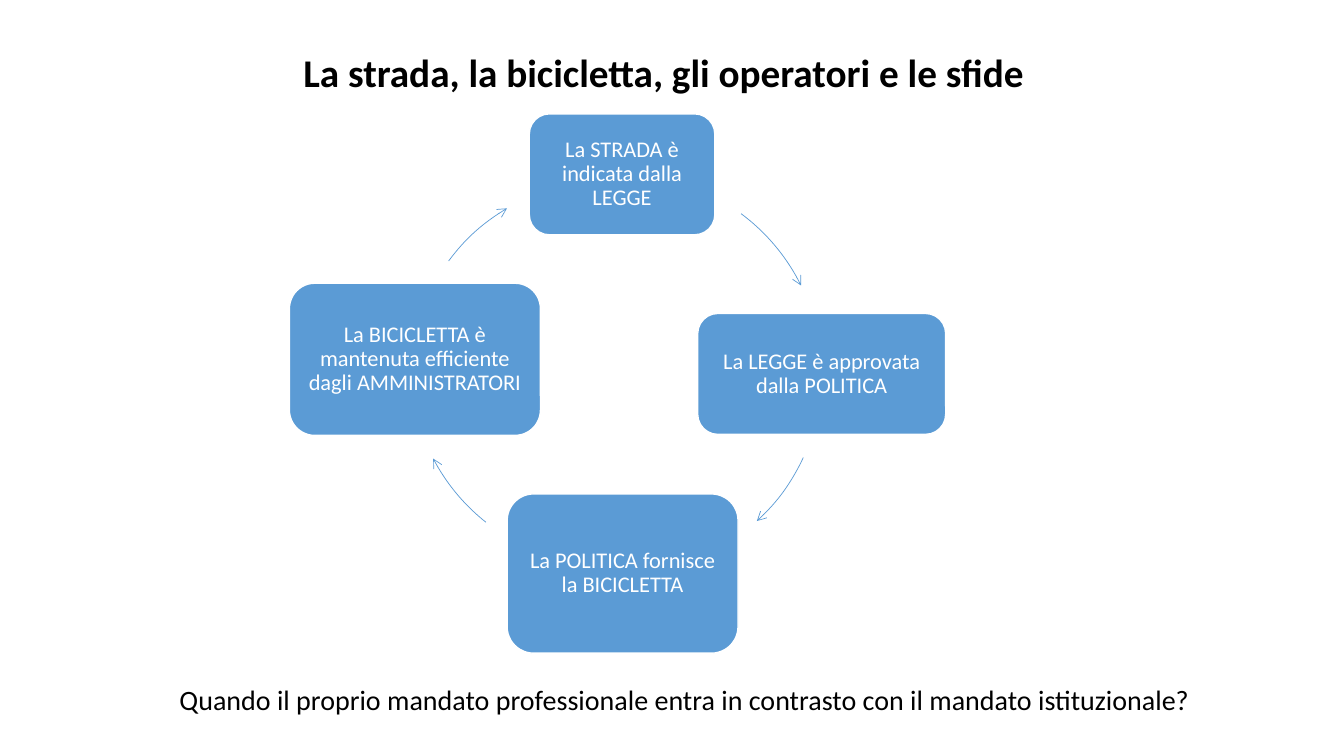
from pptx import Presentation
from pptx.dml.color import RGBColor
from pptx.enum.shapes import MSO_SHAPE as Shape
from pptx.enum.text import MSO_ANCHOR as Anchor, PP_ALIGN as Align
from pptx.oxml.ns import qn
from pptx.util import Inches, Pt
from lxml.etree import SubElement

TITLE = "La strada, la bicicletta, gli operatori e le sfide"
QUESTION = ("Quando il proprio mandato professionale entra in contrasto "
            "con il mandato istituzionale?")
# Text, then left, top, width, height in inches
STEPS = [
    ("La STRADA è indicata dalla LEGGE", (5.25, 1.13, 1.84, 1.2)),
    ("La LEGGE è approvata dalla POLITICA", (6.92, 3.11, 2.46, 1.2)),
    ("La POLITICA fornisce la BICICLETTA", (5.03, 4.9, 2.29, 1.58)),
    ("La BICICLETTA è mantenuta efficiente dagli AMMINISTRATORI",
     (2.87, 2.81, 2.49, 1.51)),
]
# Centre of the circle in inches, then start and end in clockwise degrees
ARROWS = [
    ((6.17, 3.71), (306.6, 333.7)),
    ((6.17, 3.71), (24.8, 47.5)),
    ((6.05, 3.63), (128.4, 152.3)),
    ((6.04, 3.77), (216.6, 239.3)),
]
RADIUS = 1.98

THEME = {
    "font": "Calibri",
    "black": RGBColor(0x00, 0x00, 0x00),
    "white": RGBColor(0xFF, 0xFF, 0xFF),
    "blue": RGBColor(0x5B, 0x9B, 0xD5),
    "title": Pt(28),
    "question": Pt(20),
    "step": Pt(16),
}


def write(frame, text, size, color, align, anchor, bold=False, margins=None):
    frame.text = text
    paragraph = frame.paragraphs[0]
    formats = [
        (frame, {"word_wrap": True, "vertical_anchor": anchor, **(margins or {})}),
        (paragraph, {"alignment": align, "line_spacing": 0.9, "space_before": Pt(0)}),
        (paragraph.font, {"name": THEME["font"], "size": size, "bold": bold}),
    ]
    for target, values in formats:
        for name, value in values.items():
            setattr(target, name, value)
    paragraph.font.color.rgb = color


def add_step(slide, text, box):
    step = slide.shapes.add_shape(Shape.ROUNDED_RECTANGLE, *map(Inches, box))
    step.shadow.inherit = False
    step.fill.solid()
    step.fill.fore_color.rgb = THEME["blue"]
    step.line.color.rgb = THEME["white"]
    step.line.width = Pt(1)
    sides = ("left", "top", "right", "bottom")
    write(step.text_frame, text, THEME["step"], THEME["white"], Align.CENTER,
          Anchor.MIDDLE, margins={f"margin_{side}": Inches(0.07) for side in sides})


def add_arrow(slide, centre, angles):
    left, top = (Inches(position - RADIUS) for position in centre)
    arrow = slide.shapes.add_shape(
        Shape.ARC, left, top, Inches(2 * RADIUS), Inches(2 * RADIUS))
    for index, degrees in enumerate(angles):
        arrow.adjustments[index] = degrees * 0.6  # 60000 units a degree, scaled by 100000
    arrow.shadow.inherit = False
    arrow.fill.background()
    arrow.line.color.rgb = THEME["blue"]
    arrow.line.width = Pt(0.5)
    SubElement(arrow.line._get_or_add_ln(), qn("a:tailEnd"), type="arrow")


def main():
    deck = Presentation()
    deck.slide_width, deck.slide_height = Inches(13.33), Inches(7.5)
    slide = deck.slides.add_slide(deck.slide_layouts[5])

    title = slide.shapes.title
    title.left, title.top, title.width, title.height = map(
        Inches, (0.7, 0.27, 11.76, 0.95))
    write(title.text_frame, TITLE, THEME["title"], THEME["black"],
          Align.CENTER, Anchor.MIDDLE, bold=True)

    for (text, box), (centre, angles) in zip(STEPS, ARROWS):
        add_step(slide, text, box)
        add_arrow(slide, centre, angles)

    question = slide.shapes.add_textbox(*map(Inches, (1.59, 6.76, 11.5, 0.47)))
    write(question.text_frame, QUESTION, THEME["question"], THEME["black"],
          Align.LEFT, Anchor.TOP, margins={"margin_left": Inches(0.19)})

    deck.save("out.pptx")


if __name__ == "__main__":
    main()
